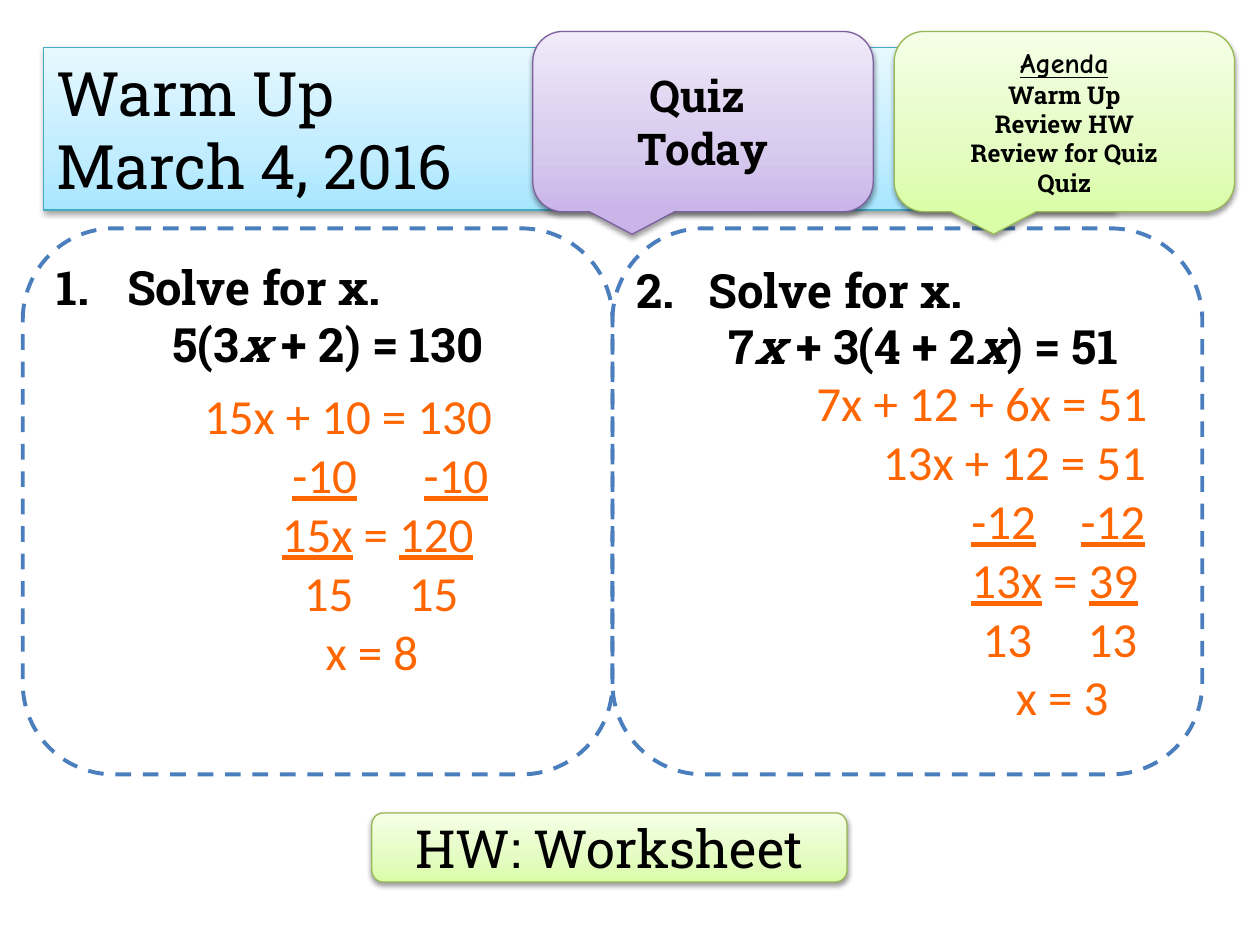
import copy

import lxml.etree
import pptx
import pptx.dml.color
import pptx.enum.dml
import pptx.enum.shapes
import pptx.enum.text
import pptx.oxml.ns
import pptx.util

Pt = pptx.util.Pt
RGBColor = pptx.dml.color.RGBColor
SHAPES = pptx.enum.shapes.MSO_SHAPE
ALIGN = pptx.enum.text.PP_ALIGN
qn = pptx.oxml.ns.qn

BLACK = RGBColor(0x00, 0x00, 0x00)
ORANGE = RGBColor(0xFF, 0x66, 0x00)
DASH_BLUE = RGBColor(0x4B, 0x7E, 0xBC)
BLUE_LINE = RGBColor(0x46, 0xAA, 0xC5)
GREEN_LINE = RGBColor(0x98, 0xB9, 0x55)
PURPLE_LINE = RGBColor(0x7D, 0x60, 0xA0)
BLUES = (RGBColor(0xA7, 0xE6, 0xFF), RGBColor(0xC1, 0xED, 0xFF), RGBColor(0xE7, 0xF8, 0xFF))
GREENS = (RGBColor(0xDA, 0xFD, 0xA7), RGBColor(0xE4, 0xFC, 0xC2), RGBColor(0xF5, 0xFF, 0xE7))
PURPLES = (RGBColor(0xC9, 0xB5, 0xE8), RGBColor(0xD8, 0xCB, 0xEE), RGBColor(0xF0, 0xEA, 0xF9))
STOPS = (0, 0.35, 1)


class WarmUpPage:
    slab = "Roboto Slab"
    comic = "Comic Neue"
    plain = "Calibri"

    def __init__(self, deck):
        self.page = deck.slides.add_slide(deck.slide_layouts[6])

    def shape(self, kind, frame, line, width):
        shape = self.page.shapes.add_shape(kind, *map(Pt, frame))
        shape.shadow.inherit = False
        shape.line.color.rgb = line
        shape.line.width = Pt(width)
        return shape

    def card(self, kind, frame, colors, line):
        card = self.shape(kind, frame, line, 0.75)
        card.fill.gradient()
        card.fill.gradient_angle = 90
        properties = card._element.spPr
        stops = properties.find(".//" + qn("a:gsLst"))
        stops.insert(1, copy.deepcopy(stops[0]))
        for stop, color, position in zip(card.fill.gradient_stops, colors, STOPS):
            stop.color.rgb = color
            stop.position = position
        shadow = lxml.etree.SubElement(
            properties.find(qn("a:effectLst")), qn("a:outerShdw"),
            blurRad=str(Pt(3.1)), dist=str(Pt(1.6)), dir="5400000", rotWithShape="0")
        color = lxml.etree.SubElement(shadow, qn("a:srgbClr"), val="000000")
        lxml.etree.SubElement(color, qn("a:alpha"), val="38000")
        card.text_frame.word_wrap = True
        card.text_frame.vertical_anchor = pptx.enum.text.MSO_ANCHOR.MIDDLE
        return card

    def panel(self, frame):
        panel = self.shape(SHAPES.ROUNDED_RECTANGLE, frame, DASH_BLUE, 2.25)
        panel.fill.background()
        panel.line.dash_style = pptx.enum.dml.MSO_LINE.DASH

    def text_box(self, frame):
        box = self.page.shapes.add_textbox(*map(Pt, frame))
        box.text_frame.word_wrap = True
        return box

    def para(self, box, align=ALIGN.LEFT, tabs=()):
        frame = box.text_frame
        used = frame.paragraphs[0].runs
        para = frame.add_paragraph() if used else frame.paragraphs[0]
        para.alignment = align
        if tabs:
            tab_list = lxml.etree.SubElement(para._p.get_or_add_pPr(), qn("a:tabLst"))
            for tab in tabs:
                lxml.etree.SubElement(tab_list, qn("a:tab"), pos=str(Pt(tab)), algn="l")
        return para

    def span(self, para, text, size, font, color=BLACK, marks=""):
        span = para.add_run()
        span.text = text
        span.font.size = Pt(size)
        span.font.name = font
        span.font.color.rgb = color
        span.font.bold = "b" in marks
        span.font.italic = "i" in marks
        span.font.underline = "u" in marks

    def number(self, para, indent):
        properties = para._p.get_or_add_pPr()
        properties.set("marL", str(Pt(indent)))
        properties.set("indent", str(-Pt(indent)))
        lxml.etree.SubElement(properties, qn("a:buFont"), typeface=self.slab)
        lxml.etree.SubElement(properties, qn("a:buAutoNum"), type="arabicPeriod")

    def equation(self, box, spans):
        para = self.para(box, ALIGN.CENTER)
        for text in spans:
            self.span(para, text, 27, self.slab, marks="bi" if text == "x" else "b")

    def solution(self, frame, lines):
        box = self.text_box(frame)
        for tabs, spans in lines:
            para = self.para(box, tabs=tabs)
            for text, marks in spans:
                self.span(para, text, 28, self.plain, ORANGE, marks)


def main():
    deck = pptx.Presentation()
    deck.slide_width, deck.slide_height = Pt(720), Pt(540)
    warm_up = WarmUpPage(deck)
    slab = warm_up.slab

    title = warm_up.card(SHAPES.RECTANGLE, (25, 27, 612, 93), BLUES, BLUE_LINE)
    para = warm_up.para(title)
    warm_up.span(para, "Warm Up", 35, slab)
    para.add_line_break()
    warm_up.span(para, "March 4, 2016", 35, slab)

    homework = warm_up.card(
        SHAPES.ROUNDED_RECTANGLE, (212.5, 464.5, 271.5, 39.5), GREENS, GREEN_LINE)
    warm_up.span(warm_up.para(homework, ALIGN.CENTER), "HW: Worksheet", 30, slab)

    callout = SHAPES.ROUNDED_RECTANGULAR_CALLOUT
    quiz = warm_up.card(callout, (304.5, 18, 194.5, 103), PURPLES, PURPLE_LINE)
    for text in ("Quiz ", "Today"):
        warm_up.span(warm_up.para(quiz, ALIGN.CENTER), text, 25, slab, marks="b")

    first = warm_up.text_box((25, 144, 325, 73))
    para = warm_up.para(first)
    warm_up.number(para, 40.5)
    warm_up.span(para, "Solve for x.", 27, slab, marks="b")
    warm_up.equation(first, ("5(3", "x", " + 2) = 130"))

    second = warm_up.text_box((356.5, 145.5, 349, 73))
    para = warm_up.para(second, tabs=(41.5,))
    warm_up.span(para, "2.\tSolve for x.", 27, slab, marks="b")
    warm_up.equation(second, ("7", "x", " + 3(4 + 2", "x", ") = 51 "))

    for left in (13, 350):
        warm_up.panel((left, 130.5, 337, 312))

    agenda = warm_up.card(callout, (511, 18, 194.5, 103), GREENS, GREEN_LINE)
    para = warm_up.para(agenda, ALIGN.CENTER)
    warm_up.span(para, "Agenda", 16, warm_up.comic, marks="bu")
    for text in ("Warm Up", "Review HW", "Review for Quiz", "Quiz"):
        warm_up.span(warm_up.para(agenda, ALIGN.CENTER), text, 14, slab, marks="b")

    warm_up.solution((109.5, 217, 206.5, 177), (
        ((), (("15x + 10 = 130", ""),)),
        ((50.5, 125.5), (("\t-10\t-10", "u"),)),
        ((44.5,), (("\t", ""), ("15x", "u"), (" = ", ""), ("120", "u"))),
        ((57, 117), (("\t15\t15", ""),)),
        ((69.5,), (("\tx = 8", ""),)),
    ))
    warm_up.solution((459.5, 209.5, 227.5, 211), (
        ((), (("7x + 12 + 6x = 51", ""),)),
        ((38,), (("\t13x + 12 = 51", ""),)),
        ((38, 88.5, 151), (("\t", ""), ("\t-12\t-12", "u"))),
        ((88.5,), (("\t", ""), ("13x", "u"), (" = ", ""), ("39", "u"))),
        ((95, 155), (("\t13\t13", ""),)),
        ((114,), (("\tx = 3", ""),)),
    ))

    deck.save("out.pptx")


if __name__ == "__main__":
    main()
